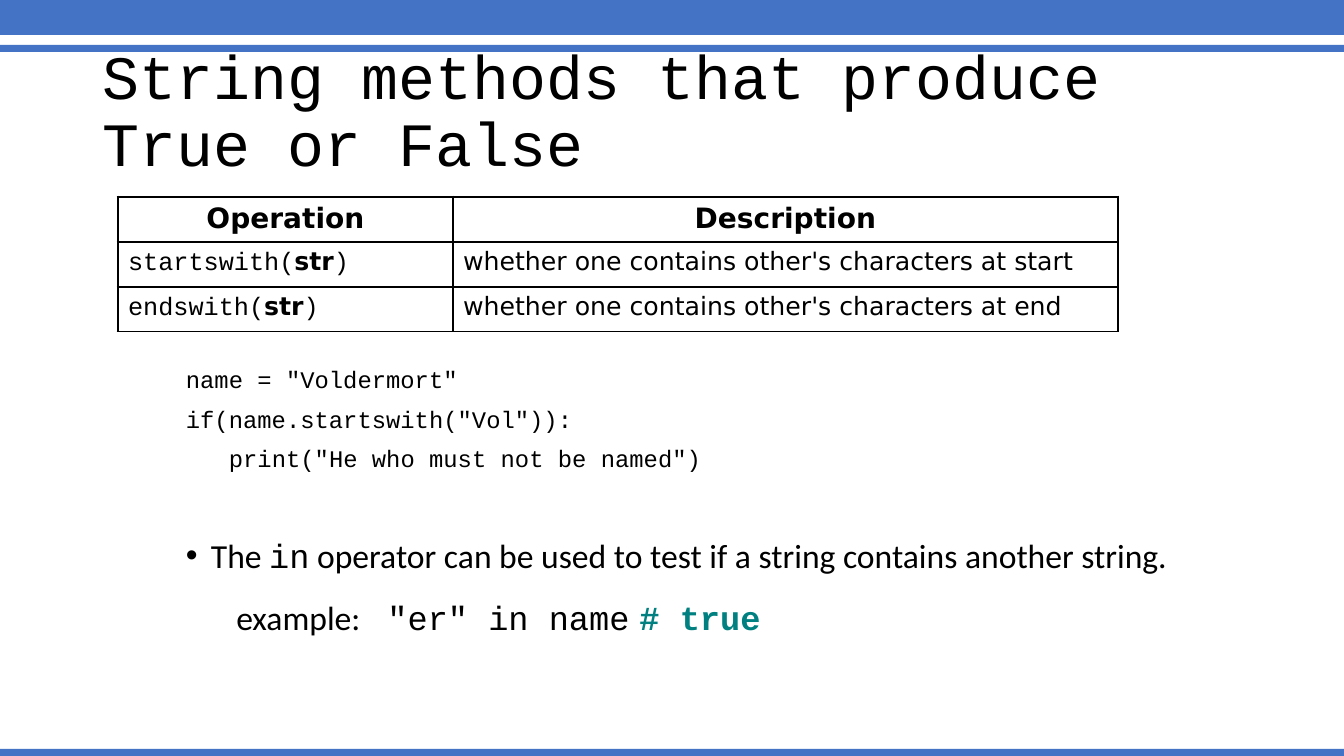
import pptx
import pptx.dml.color
import pptx.enum.shapes
import pptx.enum.text
import pptx.oxml
import pptx.oxml.ns
import pptx.util

BLUE = pptx.dml.color.RGBColor(0x44, 0x72, 0xC4)
BLACK = pptx.dml.color.RGBColor(0, 0, 0)
TEAL = pptx.dml.color.RGBColor(0, 0x80, 0x80)
CODE, BODY, SANS = "Courier New", "Calibri", "DejaVu Sans"
SCALE = 914400 / 100.8
WIDE, HIGH = 1344, 756
THIN, THICK = 1, 2.25


def px(n):
    return pptx.util.Emu(round(n * SCALE))


def write(para, text, font=CODE, size=18, color=BLACK, bold=False):
    run = para.add_run()
    run.text = text
    run.font.name = font
    run.font.size = pptx.util.Pt(size)
    run.font.color.rgb = color
    run.font.bold = bold


def node(xml):
    return pptx.oxml.parse_xml(xml.replace(">", " " + pptx.oxml.ns.nsdecls("a") + ">", 1))


class Deck:
    def __init__(self):
        self.show = pptx.Presentation()
        self.show.slide_width, self.show.slide_height = px(WIDE), px(HIGH)
        self.slide = self.show.slides.add_slide(self.show.slide_layouts[6])

    def bar(self, top, high):
        kind = pptx.enum.shapes.MSO_SHAPE.RECTANGLE
        bar = self.slide.shapes.add_shape(kind, 0, px(top), px(WIDE), px(high))
        bar.shadow.inherit = False
        bar.fill.solid()
        bar.fill.fore_color.rgb = BLUE
        bar.line.fill.background()

    def box(self, left, top, wide, high, middle=False):
        frame = self.slide.shapes.add_textbox(px(left), px(top), px(wide), px(high)).text_frame
        frame.word_wrap = True
        anchor = pptx.enum.text.MSO_ANCHOR
        frame.vertical_anchor = anchor.MIDDLE if middle else anchor.TOP
        return frame

    def para(self, frame, space=0.9, before=10, left=0, hang=0, bullet=None, tabs=()):
        para = frame.paragraphs[0]
        if para.runs:
            para = frame.add_paragraph()
        para.line_spacing = space
        para.space_before = pptx.util.Pt(before)
        props = para._p.get_or_add_pPr()
        props.set("marL", str(px(left)))
        props.set("indent", str(px(hang)))
        if bullet:
            props.append(node('<a:buFont typeface="Arial"></a:buFont>'))
            props.append(node(f'<a:buChar char="{bullet}"></a:buChar>'))
        if tabs:
            stops = "".join(f'<a:tab pos="{px(t)}" algn="l"/>' for t in tabs)
            props.append(node(f"<a:tabLst>{stops}</a:tabLst>"))
        return para

    def grid(self, left, top, cols, high, rows):
        frame = self.slide.shapes.add_table(
            len(rows), len(cols), px(left), px(top), px(sum(cols)), px(high * len(rows)))
        table = frame.table
        table.first_row = table.horz_banding = False
        for col, wide in zip(table.columns, cols):
            col.width = px(wide)
        for r, row in enumerate(rows):
            table.rows[r].height = px(high)
            for c, runs in enumerate(row):
                cell = table.cell(r, c)
                cell.fill.background()
                para = cell.text_frame.paragraphs[0]
                if r == 0:
                    para.alignment = pptx.enum.text.PP_ALIGN.CENTER
                for text, form in runs:
                    write(para, text, **form)
                self.edge(cell, L=c == 0, R=c == len(cols) - 1, T=r == 0, B=False)

    def edge(self, cell, **sides):
        props = cell._tc.get_or_add_tcPr()
        for i, (side, outer) in enumerate(sides.items()):
            width = pptx.util.Pt(THICK if outer else THIN)
            props.insert(i, node(
                f'<a:ln{side} w="{width}"><a:solidFill><a:srgbClr val="{BLACK}"/>'
                f'</a:solidFill></a:ln{side}>'))


def main():
    deck = Deck()

    # Bars at the top and bottom
    for top, high in ((0, 35), (45, 7), (749, 7)):
        deck.bar(top, high)

    # Title
    title = deck.box(93, 40, 1159, 146, middle=True)
    write(deck.para(title, before=0), "String methods that produce True or False", size=44)

    # Code sample
    code = deck.box(176, 363, 991, 159)
    lines = (('name = "Voldermort"', 0),
             ('if(name.startswith("Vol")):', 0),
             ('print("He who must not be named")', 43))
    for text, left in lines:
        write(deck.para(code, left=left), text, size=17)

    # Table of methods
    head = dict(font=SANS, size=20, bold=True)
    rows = [[[("Operation", head)], [("Description", head)]]]
    for name, place in (("startswith", "start"), ("endswith", "end")):
        call = [(name + "(", {}), ("str", dict(font=SANS, bold=True)), (")", {})]
        note = f"whether one contains other's characters at {place}"
        rows.append([call, [(note, dict(font=SANS))]])
    deck.grid(118, 197, (335, 665), 45, rows)

    # The in operator and its example
    notes = deck.box(176, 522, 1030, 160)
    point = deck.para(notes, space=1.2, left=25, hang=-25, bullet="•")
    write(point, "The ", font=BODY, size=24)
    write(point, "in", size=24)
    write(point, " operator can be used to test if a string contains another string.",
          font=BODY, size=24)
    case = deck.para(notes, space=1.2, tabs=(101, 256, 598))
    write(case, "\texample:", font=BODY, size=24)
    write(case, '\t"er" in name', size=24)
    write(case, "\t# true", size=24, color=TEAL, bold=True)

    deck.show.save("out.pptx")


if __name__ == "__main__":
    main()
